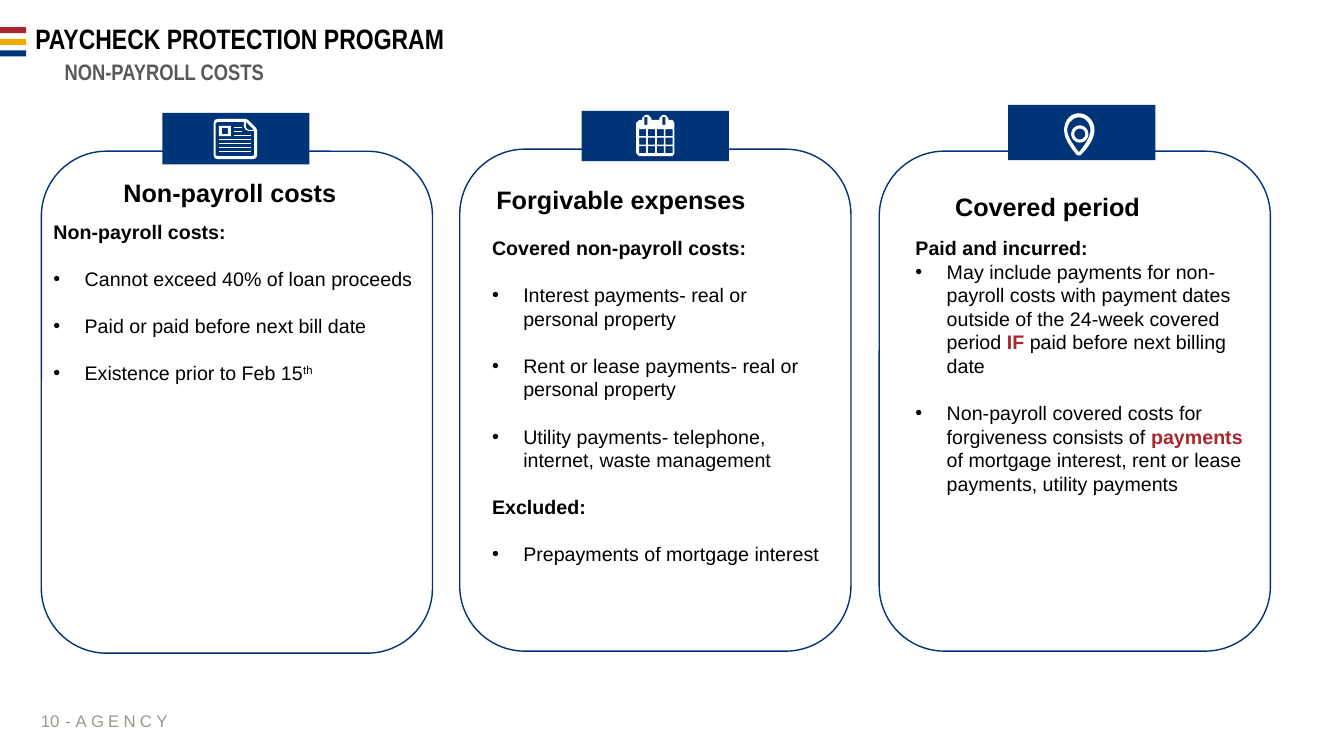
from dataclasses import dataclass

from lxml import etree
from pptx import Presentation
from pptx.dml.color import RGBColor
from pptx.enum.shapes import MSO_SHAPE
from pptx.enum.text import MSO_ANCHOR, MSO_AUTO_SIZE, PP_ALIGN
from pptx.oxml.ns import qn
from pptx.util import Inches, Pt

RECTANGLE, ROUNDED = MSO_SHAPE.RECTANGLE, MSO_SHAPE.ROUNDED_RECTANGLE
TOP, MIDDLE = MSO_ANCHOR.TOP, MSO_ANCHOR.MIDDLE
LEFT, CENTER, RIGHT = PP_ALIGN.LEFT, PP_ALIGN.CENTER, PP_ALIGN.RIGHT
NO_AUTOFIT = MSO_AUTO_SIZE.NONE
COMPARISON_LAYOUT = 4
CURVE_STEPS = 12


@dataclass(frozen=True)
class Theme:
    navy: str = "003478"
    red: str = "AA272F"
    gold: str = "F0AB00"
    black: str = "000000"
    gray: str = "595959"
    taupe: str = "9D968D"
    white: str = "FFFFFF"
    font: str = "Arial"
    narrow: str = "Arial Narrow"
    title: int = 20
    subtitle: int = 16
    heading: int = 18
    body: int = 14
    footer: int = 12
    leading: float = 16.85


def rectangle(left, top, width, height):
    right, bottom = left + width, top + height
    return [(left, top), (right, top), (right, bottom), (left, bottom)]


def trace(start, *curves):
    points = [start]
    for first, second, end in curves:
        origin = points[-1]
        for step in range(1, CURVE_STEPS + 1):
            t = step / CURVE_STEPS
            weights = ((1 - t) ** 3, 3 * t * (1 - t) ** 2, 3 * t * t * (1 - t), t ** 3)
            anchors = (origin, first, second, end)
            points.append(tuple(sum(w * a[axis] for w, a in zip(weights, anchors)) for axis in (0, 1)))
    return points


def ellipse(x, y, rx, ry):
    kx, ky = rx * 0.55, ry * 0.55
    return trace((x, y - ry),
                 ((x + kx, y - ry), (x + rx, y - ky), (x + rx, y)),
                 ((x + rx, y + ky), (x + kx, y + ry), (x, y + ry)),
                 ((x - kx, y + ry), (x - rx, y + ky), (x - rx, y)),
                 ((x - rx, y - ky), (x - kx, y - ry), (x, y - ry)))


class SlideBuilder:
    def __init__(self, page, theme):
        self.page = page
        self.theme = theme

    def paint(self, shape, fill=None, line=None, weight=1):
        shape.shadow.inherit = False
        if fill:
            shape.fill.solid()
            shape.fill.fore_color.rgb = RGBColor.from_string(fill)
        else:
            shape.fill.background()
        if line:
            shape.line.color.rgb = RGBColor.from_string(line)
            shape.line.width = Pt(weight)
        else:
            shape.line.fill.background()

    def shape(self, kind, at, **paint):
        self.paint(self.page.shapes.add_shape(kind, *map(Inches, at)), **paint)

    def icon(self, *contours, line=None, weight=1):
        builder = None
        for contour in contours:
            (x, y), *rest = [(px * 1000, py * 1000) for px, py in contour]
            if builder is None:
                builder = self.page.shapes.build_freeform(x, y, scale=914.4)
            else:
                builder.move_to(x, y)
            builder.add_line_segments(rest, close=True)
        self.paint(builder.convert_to_shape(), self.theme.white, line, weight)

    def style(self, span, size, color, bold=False, font=None):
        span.font.name = font or self.theme.font
        span.font.size = Pt(size)
        span.font.bold = bold
        span.font.color.rgb = RGBColor.from_string(color)

    def placeholder(self, index, at):
        box = self.page.placeholders[index]
        box.left, box.top, box.width, box.height = map(Inches, at)
        return box

    def frame(self, box, anchor=TOP, wrap=True):
        frame = box.text_frame
        frame.auto_size = NO_AUTOFIT
        frame.word_wrap = wrap
        frame.vertical_anchor = anchor
        return frame

    def bullet(self, para, bulleted):
        properties = para._p.get_or_add_pPr()
        indent = Inches(0.31) if bulleted else 0
        properties.set("marL", str(indent))
        properties.set("indent", str(-indent))
        if bulleted:
            etree.SubElement(properties, qn("a:buChar")).set("char", "•")
        else:
            etree.SubElement(properties, qn("a:buNone"))

    def label(self, text, at, size, color, box=None, anchor=TOP, align=LEFT,
              bold=False, font=None, wrap=True):
        box = box or self.page.shapes.add_textbox(*map(Inches, at))
        frame = self.frame(box, anchor, wrap)
        frame.text = text
        para = frame.paragraphs[0]
        self.bullet(para, False)
        para.alignment = align
        para.space_before = Pt(0)
        self.style(para.runs[0], size, color, bold, font)
        return box

    def listing(self, index, at, items):
        theme = self.theme
        frame = self.frame(self.placeholder(index, at))
        for number, (kind, gap, *texts) in enumerate(items):
            para = frame.paragraphs[0] if number == 0 else frame.add_paragraph()
            self.bullet(para, kind == "bullet")
            para.alignment = LEFT
            para.line_spacing = Pt(theme.leading)
            para.space_before = Pt(theme.leading if gap else 0)
            for position, text in enumerate(texts):
                span = para.add_run()
                span.text = text
                accent = position == 1 and text != "th"
                self.style(span, theme.body, theme.red if accent else theme.black,
                           accent or kind == "head")
                if text == "th":
                    span._r.get_or_add_rPr().set("baseline", "30000")


def draw_newspaper(slide):
    slide.icon([(2.16, 1.18), (2.44, 1.18), (2.46, 1.19), (2.54, 1.27), (2.55, 1.29), (2.55, 1.54),
                (2.54, 1.57), (2.5, 1.58), (2.16, 1.58), (2.13, 1.57), (2.12, 1.54), (2.12, 1.22), (2.13, 1.19)],
               [(2.16, 1.21), (2.42, 1.21), (2.42, 1.26), (2.44, 1.29), (2.47, 1.3), (2.52, 1.3),
                (2.52, 1.54), (2.5, 1.55), (2.16, 1.55), (2.14, 1.54), (2.14, 1.22)],
               [(2.44, 1.21), (2.52, 1.29), (2.47, 1.29), (2.45, 1.28), (2.44, 1.26)])
    slide.icon(rectangle(2.17, 1.25, 0.12, 0.1), rectangle(2.2, 1.27, 0.06, 0.06))
    for row in range(7):
        left, width = ((2.32, 0.08), (2.32, 0.17), (2.17, 0.32))[(row > 1) + (row > 2)]
        slide.icon(rectangle(left, 1.26 + row * 0.04, width, 0.01))


def draw_calendar(slide):
    cells = [rectangle(6.34 + column * 0.087, 1.28 + row * 0.085, 0.07, 0.07)
             for row in range(3) for column in range(4)]
    rings = [rectangle(left, 1.16, 0.03, 0.08) for left in (6.39, 6.57)]
    slide.icon([(6.34, 1.19), (6.37, 1.19), (6.37, 1.17), (6.4, 1.14), (6.43, 1.14), (6.46, 1.17),
                (6.46, 1.19), (6.54, 1.19), (6.54, 1.17), (6.57, 1.14), (6.6, 1.14), (6.63, 1.17),
                (6.63, 1.19), (6.67, 1.19), (6.69, 1.22), (6.69, 1.52), (6.67, 1.55), (6.34, 1.55),
                (6.31, 1.52), (6.31, 1.22)], *cells, *rings)


def draw_pin(slide):
    white = slide.theme.white
    slide.icon(ellipse(10.71, 1.33, 0.08, 0.08), ellipse(10.71, 1.33, 0.06, 0.06), line=white, weight=0.75)
    outside = trace((10.7, 1.13), ((10.62, 1.13), (10.56, 1.2), (10.56, 1.29)),
                    ((10.56, 1.38), (10.63, 1.47), (10.68, 1.53)),
                    ((10.69, 1.54), (10.71, 1.54), (10.72, 1.53)),
                    ((10.78, 1.47), (10.85, 1.38), (10.85, 1.29)),
                    ((10.85, 1.2), (10.78, 1.13), (10.7, 1.13)))
    inside = trace((10.7, 1.52), ((10.66, 1.46), (10.58, 1.37), (10.58, 1.29)),
                   ((10.58, 1.22), (10.64, 1.16), (10.7, 1.16)),
                   ((10.77, 1.16), (10.82, 1.22), (10.82, 1.29)),
                   ((10.82, 1.37), (10.75, 1.46), (10.7, 1.52)))
    slide.icon(outside, inside, line=white, weight=0.75)


def main():
    theme = Theme()
    deck = Presentation()
    deck.slide_width, deck.slide_height = Inches(13.33), Inches(7.5)
    page = deck.slides.add_slide(deck.slide_layouts[COMPARISON_LAYOUT])
    slide = SlideBuilder(page, theme)

    for number, color in enumerate((theme.red, theme.gold, theme.navy)):
        slide.shape(RECTANGLE, (0, 0.27 + number * 0.115, 0.26, 0.06), fill=color)
    title = slide.label("PAYCHECK PROTECTION PROGRAM", None, theme.title, theme.black,
                        box=slide.placeholder(0, (0.25, 0.21, 12.84, 0.39)),
                        anchor=MIDDLE, bold=True, font=theme.narrow)
    title.text_frame.paragraphs[0].line_spacing = 0.9
    slide.label("NON-PAYROLL COSTS", None, theme.subtitle, theme.gray,
                box=slide.placeholder(3, (0.09, 0.53, 3.08, 0.37)),
                align=CENTER, bold=True, font=theme.narrow)

    cards = [
        ("Non-payroll costs", (0.41, 1.5, 3.88, 4.98), (1.61, 1.12, 1.46, 0.51), (0.53, 1.71),
         draw_newspaper, 1, (0.43, 2.13, 3.78, 2.49),
         [("head", False, "Non-payroll costs:"),
          ("bullet", True, "Cannot exceed 40% of loan proceeds"),
          ("bullet", True, "Paid or paid before next bill date"),
          ("bullet", True, "Existence prior to Feb 15", "th")]),
        ("Forgivable expenses", (4.56, 1.48, 3.88, 4.98), (5.77, 1.1, 1.46, 0.5), (4.41, 1.78),
         draw_calendar, 2, (4.78, 2.29, 3.49, 3.4),
         [("head", False, "Covered non-payroll costs:"),
          ("bullet", True, "Interest payments- real or personal property"),
          ("bullet", True, "Rent or lease payments- real or personal property"),
          ("bullet", True, "Utility payments- telephone, internet, waste management"),
          ("head", True, "Excluded:"),
          ("bullet", True, "Prepayments of mortgage interest")]),
        ("Covered period", (8.72, 1.5, 3.88, 4.96), (10, 1.04, 1.46, 0.55), (8.64, 1.85),
         draw_pin, 4, (8.98, 2.29, 3.5, 2.69),
         [("head", False, "Paid and incurred:"),
          ("bullet", False, "May include payments for non-payroll costs with payment dates outside of "
           "the 24-week covered period ", "IF ", "paid before next billing date"),
          ("bullet", True, "Non-payroll covered costs for forgiveness consists of ", "payments",
           " of mortgage interest, rent or lease payments, utility payments")]),
    ]
    for heading, outline, tab, corner, draw_icon, index, area, items in cards:
        slide.shape(ROUNDED, outline, line=theme.navy)
        slide.shape(RECTANGLE, tab, fill=theme.navy)
        draw_icon(slide)
        slide.label(heading, (*corner, 3.5, 0.4), theme.heading, theme.black, align=CENTER, bold=True)
        slide.listing(index, area, items)

    number = slide.label("10", (0.22, 6.95, 0.37, 0.4), theme.footer, theme.taupe, anchor=MIDDLE, align=RIGHT)
    number.text_frame.margin_left = number.text_frame.margin_right = 0
    footer = slide.label("- ", (0.55, 6.95, 1.14, 0.4), theme.footer, theme.taupe, anchor=MIDDLE, wrap=False)
    firm = footer.text_frame.paragraphs[0].add_run()
    firm.text = "AGENCY"
    slide.style(firm, theme.footer, theme.taupe)
    firm._r.get_or_add_rPr().set("spc", "300")
    deck.save("out.pptx")


if __name__ == "__main__":
    main()
